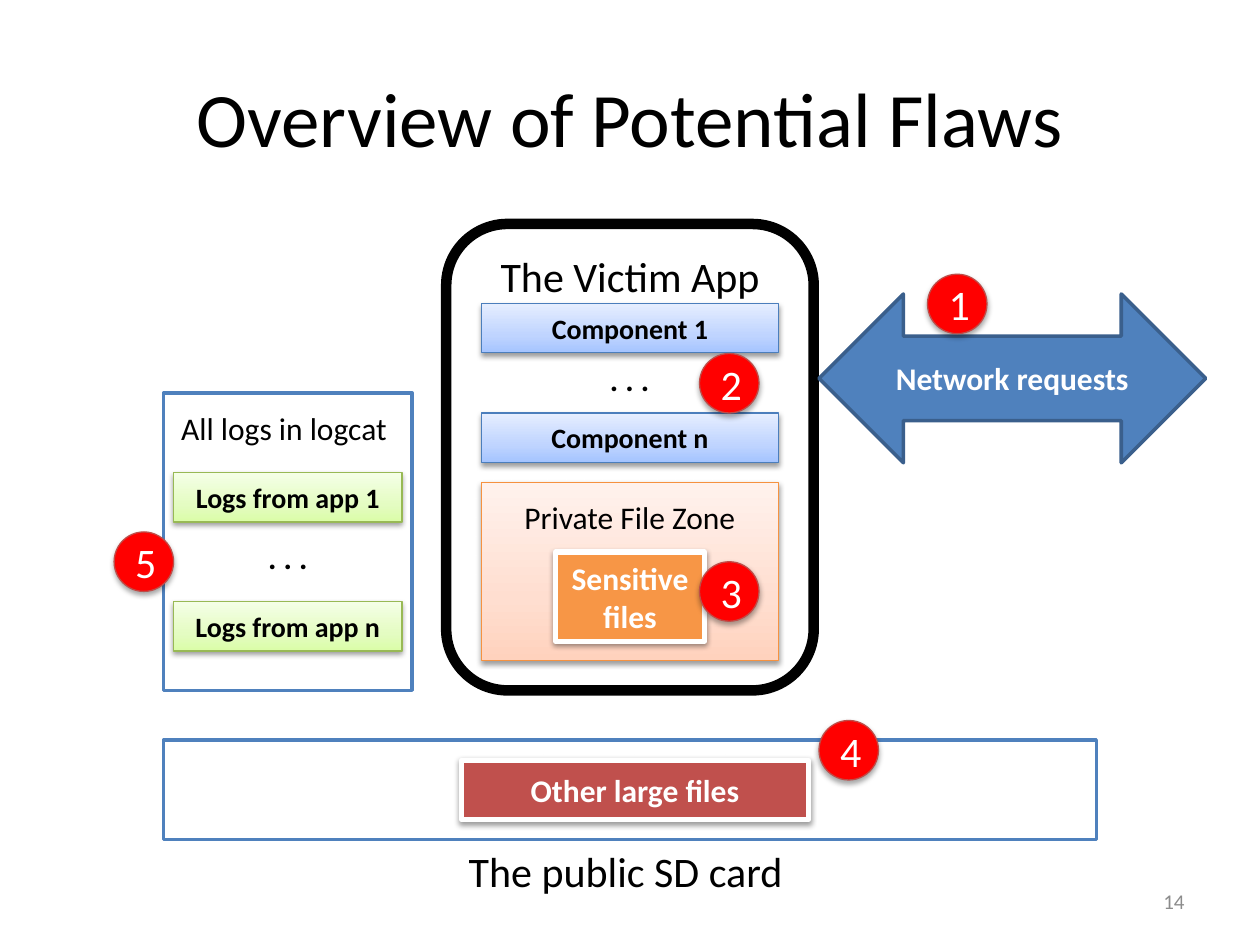
from copy import deepcopy

from lxml import etree
from pptx import Presentation
from pptx.dml.color import RGBColor
from pptx.enum import shapes, text
from pptx.oxml import ns
from pptx.util import Pt

HUES = {
    "black": "000000", "white": "FFFFFF", "grey": "8C8C8C",
    "blue": "4F81BD", "navy": "3A5F8C", "brick": "C0504D",
    "orange": "F79646", "red": "FF0000", "rust": "BF4C48",
    "sky edge": "4B7EBC", "peach edge": "F69240", "lime edge": "98B955",
}
# Gradient colours run from the bottom edge to the top edge.
FADES = {
    "sky": ("A4C4FF", "BFD4FF", "E6EEFF"),
    "peach": ("FFD2BD", "FFDED0", "FFF2ED"),
    "lime": ("DAFDA7", "E4FCC2", "F5FFE7"),
}
STOPS = (0, 0.35, 1)
KIND = shapes.MSO_SHAPE
ALIGN = text.PP_ALIGN
ANCHOR = text.MSO_ANCHOR


def rgb(name):
    return RGBColor.from_string(HUES[name])


class Canvas:
    def __init__(self, slide, font="Calibri"):
        self.slide = slide
        self.font = font

    def letter(self, shape, words, size, hue, bold=False,
               align=ALIGN.CENTER, anchor=ANCHOR.MIDDLE):
        """Put one styled paragraph into a shape."""
        frame = shape.text_frame
        frame.word_wrap = True
        frame.vertical_anchor = anchor
        par = frame.paragraphs[0]
        par.text = words
        par.alignment = align
        font = par.font
        font.name, font.size, font.bold = self.font, Pt(size), bold
        font.color.rgb = rgb(hue)

    def label(self, box, words, size, hue="black", bold=False,
              align=ALIGN.CENTER, anchor=ANCHOR.TOP):
        shape = self.slide.shapes.add_textbox(*map(Pt, box))
        self.letter(shape, words, size, hue, bold, align, anchor)

    def shape(self, box, fill, edge, width, kind=KIND.RECTANGLE):
        shape = self.slide.shapes.add_shape(kind, *map(Pt, box))
        shape.shadow.inherit = False
        if fill in FADES:
            self.fade(shape, FADES[fill])
        else:
            shape.fill.solid()
            shape.fill.fore_color.rgb = rgb(fill)
        shape.line.color.rgb = rgb(edge)
        shape.line.width = Pt(width)
        return shape

    def fade(self, shape, hues):
        """Fill with a three-stop gradient that runs upwards."""
        shape.fill.gradient()
        shape.fill.gradient_angle = 90
        stops = shape._element.spPr.find(".//" + ns.qn("a:gsLst"))
        stops.append(deepcopy(stops[-1]))
        for stop, place, hue in zip(shape.fill.gradient_stops, STOPS, hues):
            stop.position = place
            stop.color.rgb = RGBColor.from_string(hue)

    def shade(self, shape, alpha=38, dist=1.6):
        """Cast a soft shadow straight down."""
        effects = shape._element.spPr.find(ns.qn("a:effectLst"))
        cast = etree.SubElement(
            effects, ns.qn("a:outerShdw"), blurRad=str(Pt(3.1)),
            dist=str(Pt(dist)), dir="5400000", rotWithShape="0")
        tint = etree.SubElement(cast, ns.qn("a:srgbClr"), val=HUES["black"])
        etree.SubElement(tint, ns.qn("a:alpha"), val=str(alpha * 1000))

    def panel(self, box, fade, words=""):
        shape = self.shape(box, fade, fade + " edge", 0.75)
        self.shade(shape)
        if words:
            self.letter(shape, words, 16, "black", True)

    def files(self, box, fill, words):
        shape = self.shape(box, fill, "white", 3)
        self.shade(shape)
        self.letter(shape, words, 18, "white", True)

    def dots(self, left, top):
        self.label((left, top, 113, 29), ". . .", 18, bold=True)

    def badge(self, left, top, number):
        shape = self.shape((left, top, 34, 34), "red", "rust", 0.75, KIND.OVAL)
        self.shade(shape, 35, 1.8)
        self.letter(shape, str(number), 24, "white")


def main():
    deck = Presentation()
    deck.slide_width, deck.slide_height = Pt(720), Pt(540)
    art = Canvas(deck.slides.add_slide(deck.slide_layouts[6]))

    art.label((36, 21.6, 648, 90), "Overview of Potential Flaws", 44,
              anchor=ANCHOR.MIDDLE)
    art.label((516, 500.5, 168, 28.75), "14", 12, "grey",
              align=ALIGN.RIGHT, anchor=ANCHOR.MIDDLE)

    # Public SD card
    art.shape((93.5, 423, 533, 56.7), "white", "blue", 2)
    art.label((247, 479.7, 221, 36), "The public SD card", 24)
    art.files((263.6, 434.4, 198.5, 34), "brick", "Other large files")

    # Victim app
    art.shape((255, 128, 210, 266.5), "white", "black", 6,
              KIND.ROUNDED_RECTANGLE)
    art.label((263.5, 139.7, 193, 36), "The Victim App", 24)
    for top, mark in ((173.4, "1"), (236, "n")):
        art.panel((275, top, 170, 28.3), "sky", f"Component {mark}")
    art.dots(303.3, 202)
    art.panel((275, 275.7, 170, 102), "peach")
    art.files((317.5, 315.4, 85, 51), "orange", "Sensitive files")
    art.label((292, 281, 136, 29), "Private File Zone", 18)

    # Network
    arrow = art.shape((468, 168, 221, 96.5), "blue", "navy", 2,
                      KIND.LEFT_RIGHT_ARROW)
    art.letter(arrow, "Network requests", 18, "white", True)

    # Logs
    art.shape((93.5, 224.5, 142, 170), "white", "blue", 2)
    art.label((96.5, 230.4, 136, 29), "All logs in logcat", 18,
              align=ALIGN.LEFT)
    for top, mark in ((270, "1"), (343.7, "n")):
        art.panel((99.2, top, 130.5, 28.3), "lime", f"Logs from app {mark}")
    art.dots(108, 304)

    spots = ((530, 156.7), (399.7, 202), (399.7, 321), (468, 411.7), (65.2, 304))
    for number, (left, top) in enumerate(spots, 1):
        art.badge(left, top, number)

    deck.save("out.pptx")


if __name__ == "__main__":
    main()
